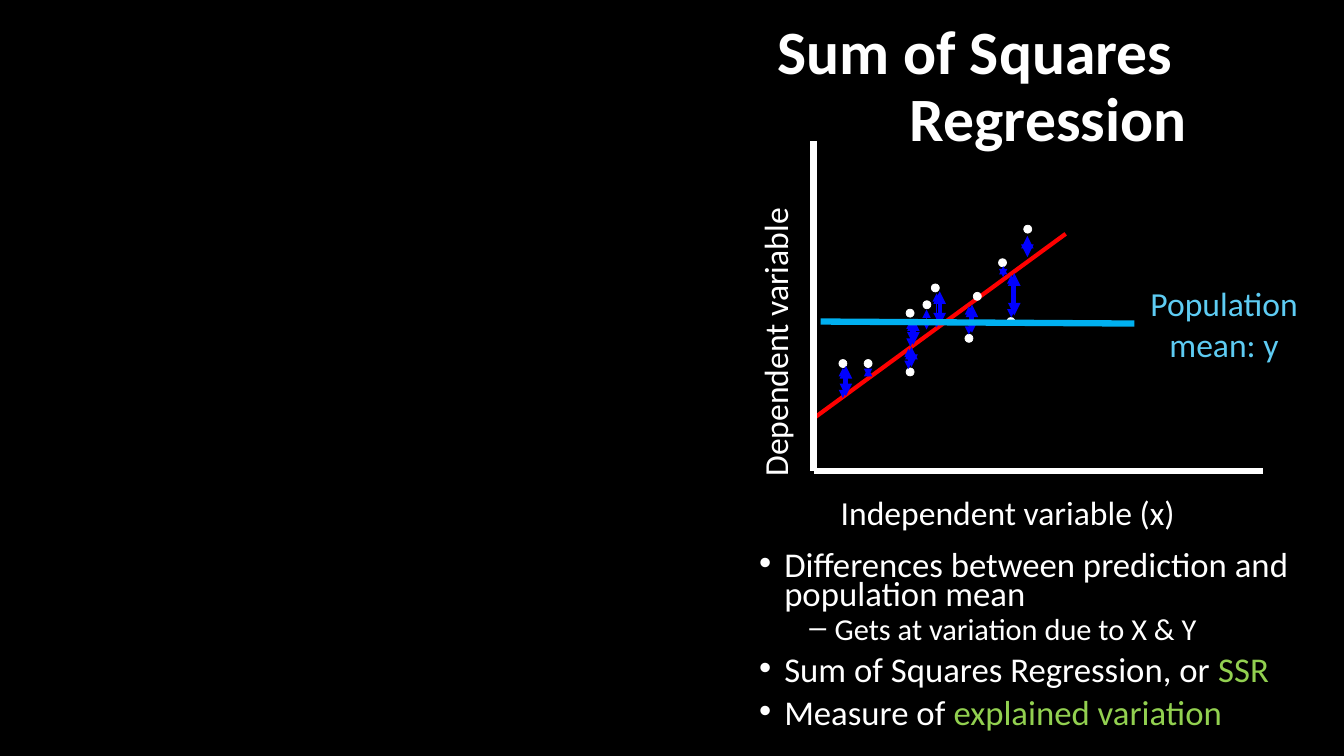
from pptx import Presentation
from pptx.dml.color import RGBColor
from pptx.enum.shapes import MSO_CONNECTOR, MSO_SHAPE
from pptx.enum.text import MSO_ANCHOR, PP_ALIGN
from pptx.oxml.ns import qn
from pptx.util import Inches, Pt
from lxml.etree import SubElement

BLACK = RGBColor(0x00, 0x00, 0x00)
WHITE = RGBColor(0xFF, 0xFF, 0xFF)
RED = RGBColor(0xFF, 0x00, 0x00)
BLUE = RGBColor(0x00, 0x00, 0xFF)
MEAN_LINE = RGBColor(0x00, 0xB0, 0xF0)
MEAN_TEXT = RGBColor(0x5E, 0xCC, 0xF3)
GREEN = RGBColor(0x92, 0xD0, 0x50)

DOT = 0.08
GRID = 1 / 12
# Columns and rows of the scatter points, in grid steps from the plot's top left
POINTS = [(11, 27), (6, 26), (13, 19), (18, 23), (14, 17), (19, 18),
          (23, 21), (22, 14), (11, 20), (3, 26), (25, 10)]
# x, top and bottom of each difference arrow, in inches from the plot's top left
BOLD_DIFFERENCES = [(0.29, 2.25, 2.55), (0.94, 2.06, 2.26), (0.96, 1.78, 2.04),
                    (1.22, 1.51, 1.85), (1.54, 1.64, 1.92), (1.96, 1.33, 1.75)]
FINE_DIFFERENCES = [(0.54, 2.25, 2.34), (1.12, 1.67, 1.87), (1.88, 1.24, 1.35)]
TOP_DIFFERENCE = (2.12, 0.94, 1.15)

BULLETS = [
    (0, [("Differences between prediction and population mean", WHITE)]),
    (1, [("Gets at variation due to X & Y", WHITE)]),
    (0, [("Sum of Squares Regression, or ", WHITE), ("SSR", GREEN)]),
    (0, [("Measure of ", WHITE), ("explained variation", GREEN)]),
]
# Bullet sign, left margin in inches, text size and space before for each level
LEVELS = [("•", 0.25, 24.8, 10), ("‒", 0.75, 21.7, 5)]


def add_run(paragraph, text, size, color, bold=False):
    run = paragraph.add_run()
    run.text = text
    font = run.font
    font.name, font.size, font.bold = "Calibri", Pt(size), bold
    font.color.rgb = color


def add_frame(slide, left, top, width, height, wrap=True):
    box = slide.shapes.add_textbox(Inches(left), Inches(top), Inches(width), Inches(height))
    box.text_frame.word_wrap = wrap
    return box


def add_label(slide, text, box, color=WHITE, align=PP_ALIGN.LEFT, wrap=True, rotation=0):
    label = add_frame(slide, *box, wrap=wrap)
    label.rotation = rotation
    paragraph = label.text_frame.paragraphs[0]
    paragraph.alignment = align
    add_run(paragraph, text, 24, color)


def add_line(slide, start, end, color, width, arrows=False):
    line = slide.shapes.add_connector(
        MSO_CONNECTOR.STRAIGHT, *(Inches(value) for value in (*start, *end)))
    line.line.color.rgb = color
    line.line.width = Pt(width)
    properties = line._element.spPr
    if arrows:
        outline = properties.find(qn("a:ln"))
        for tag in ("a:headEnd", "a:tailEnd"):
            SubElement(outline, qn(tag), type="triangle")
    SubElement(properties, qn("a:effectLst"))


def add_title(slide, left, top, width, height):
    frame = add_frame(slide, left, top, width, height).text_frame
    frame.vertical_anchor = MSO_ANCHOR.MIDDLE
    paragraph = frame.paragraphs[0]
    paragraph.alignment = PP_ALIGN.RIGHT
    paragraph.line_spacing = 0.9
    add_run(paragraph, "Sum of Squares ", 44, WHITE, bold=True)
    paragraph.add_line_break()
    add_run(paragraph, "Regression", 44, WHITE, bold=True)


def add_point(slide, center_x, center_y):
    point = slide.shapes.add_shape(
        MSO_SHAPE.OVAL, Inches(center_x - DOT / 2), Inches(center_y - DOT / 2),
        Inches(DOT), Inches(DOT))
    point.shadow.inherit = False
    point.fill.solid()
    point.fill.fore_color.rgb = WHITE
    point.line.color.rgb = WHITE
    point.line.width = Pt(0.5)


def add_regression_plot(slide, left, top, width, height):
    bottom = top + height
    add_line(slide, (left, top + 2.75), (left + 2.5, top + 0.92), RED, 3)
    add_line(slide, (left, top), (left, bottom), WHITE, 4.5)
    add_line(slide, (left, bottom), (left + width, bottom), WHITE, 4.5)
    add_label(slide, "Independent variable (x)", (left + 0.17, bottom + 0.16, 3.55, 0.5),
              wrap=False)
    add_label(slide, "Dependent variable", (left - 2.1, top + 1.46, 3.43, 0.5), rotation=270)

    for column, row in POINTS:
        add_point(slide, left + column * GRID + DOT / 2, top + row * GRID + DOT / 2)

    fine = [(*arrow, 0.25) for arrow in BOLD_DIFFERENCES + FINE_DIFFERENCES]
    bold = [(x + 0.03, high - 0.02, low - 0.02, 3) for x, high, low in BOLD_DIFFERENCES]
    for x, high, low, weight in fine + [(*TOP_DIFFERENCE, 3)] + bold:
        add_line(slide, (left + x, top + high), (left + x, top + low), BLUE, weight,
                 arrows=True)

    add_label(slide, "Population mean: y", (left + 3.18, top + 1.36, 1.78, 0.91),
              MEAN_TEXT, PP_ALIGN.CENTER)
    add_line(slide, (left + 3.18, top + 1.81), (left + 0.07, top + 1.79), MEAN_LINE, 4.5)


def add_bullets(slide, left, top, width, height):
    frame = add_frame(slide, left, top, width, height).text_frame
    for index, (level, parts) in enumerate(BULLETS):
        sign, margin, size, space = LEVELS[level]
        paragraph = frame.add_paragraph() if index else frame.paragraphs[0]
        paragraph.level = level
        paragraph.line_spacing = 0.7
        paragraph.space_before = Pt(space if index else 0)
        properties = paragraph._p.get_or_add_pPr()
        properties.set("marL", str(Inches(margin)))
        properties.set("indent", str(Inches(-0.25)))
        SubElement(properties, qn("a:buFont"), typeface="Arial")
        SubElement(properties, qn("a:buChar"), char=sign)
        for text, color in parts:
            add_run(paragraph, text, size, color)


def main():
    deck = Presentation()
    deck.slide_width, deck.slide_height = Inches(13.33), Inches(7.5)
    slide = deck.slides.add_slide(deck.slide_layouts[6])
    slide.background.fill.solid()
    slide.background.fill.fore_color.rgb = BLACK
    add_title(slide, 0.92, 0.15, 10.95, 1.45)
    add_bullets(slide, 7.43, 5.45, 5.78, 1.9)
    add_regression_plot(slide, 8.07, 1.4, 4.46, 3.27)
    deck.save("out.pptx")


if __name__ == "__main__":
    main()
